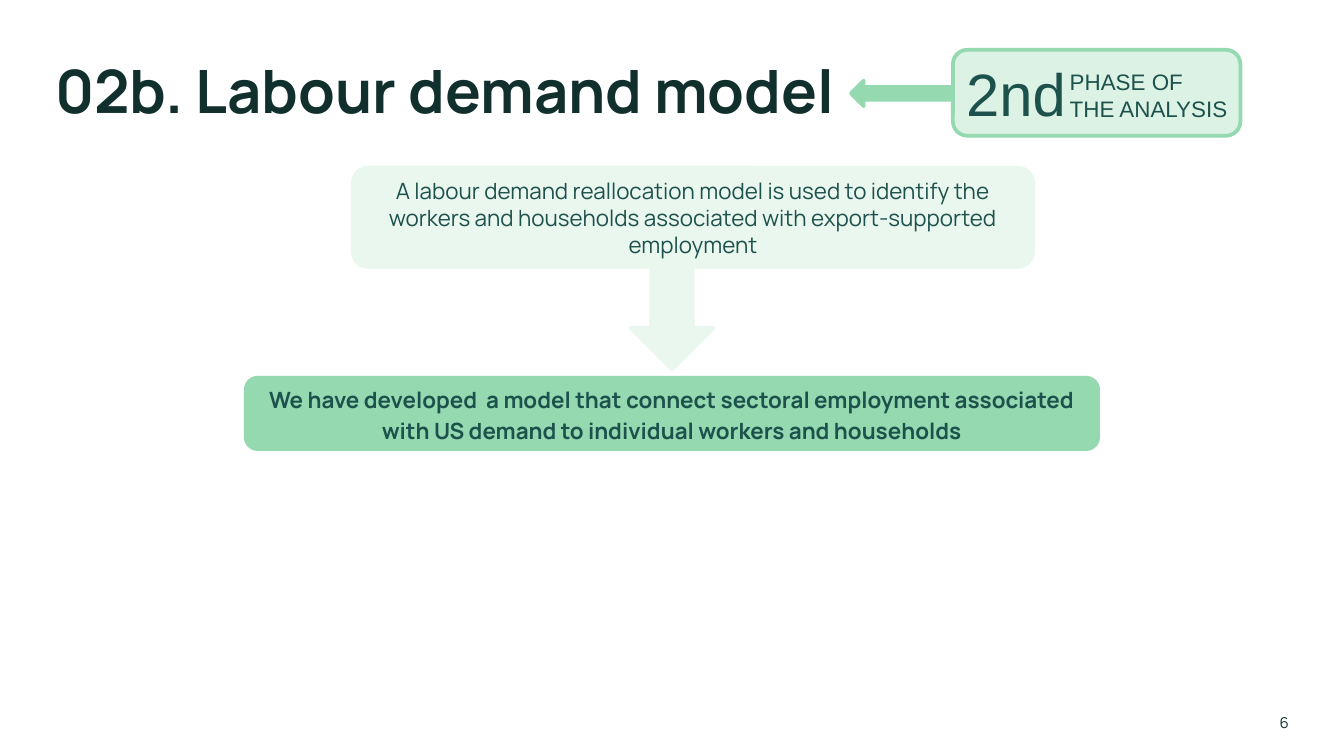
from dataclasses import dataclass

from pptx import Presentation
from pptx.dml.color import RGBColor
from pptx.enum import shapes, text
from pptx.util import Pt


@dataclass(frozen=True)
class Theme:
    ink: str = "11302D"
    teal: str = "1D514C"
    green: str = "95D9B0"
    mint: str = "DCF2E5"
    pale: str = "EAF7EF"
    display: str = "Manrope"
    plain: str = "Arial"
    heading: int = 32
    body: int = 12
    small: int = 8
    outline: int = 2


THEME = Theme()
KIND = shapes.MSO_SHAPE
ALIGN = text.PP_ALIGN
ANCHOR = text.MSO_ANCHOR


def write(box, content, size=THEME.body, font=THEME.display, color=THEME.teal,
          bold=False, align=ALIGN.LEFT, anchor=ANCHOR.TOP, spacing=None,
          inset=True, wrap=True):
    frame = box.text_frame
    frame.word_wrap = wrap
    frame.vertical_anchor = anchor
    if not inset:
        frame.margin_left = frame.margin_right = Pt(0)
        frame.margin_top = frame.margin_bottom = Pt(0)
    for index, line in enumerate(content.split("\n")):
        para = frame.add_paragraph() if index else frame.paragraphs[0]
        para.alignment = align
        if spacing:
            para.line_spacing = spacing
        span = para.add_run()
        span.text = line
        span.font.name = font
        span.font.size = Pt(size)
        span.font.bold = bold
        span.font.color.rgb = RGBColor.from_string(color)


def add_label(page, area, content, **style):
    box = page.shapes.add_textbox(*map(Pt, area))
    write(box, content, **style)


def add_block(page, kind, area, fill, line=None):
    block = page.shapes.add_shape(kind, *map(Pt, area))
    block.shadow.inherit = False
    block.fill.solid()
    block.fill.fore_color.rgb = RGBColor.from_string(fill)
    if line:
        block.line.color.rgb = RGBColor.from_string(line)
        block.line.width = Pt(THEME.outline)
    else:
        block.line.fill.background()
    return block


def add_phase_badge(page):
    left, top, width, height = 510.5, 26.7, 154, 46
    add_block(page, KIND.LEFT_ARROW, (455.8, 43.2, 61.2, 13.7), THEME.green, THEME.green)
    add_block(page, KIND.ROUNDED_RECTANGLE, (left, top, width, height),
              THEME.mint, THEME.green)
    add_label(page, (left, top, 68.4, height), "2nd", size=THEME.heading,
              font=THEME.plain, wrap=False)
    add_label(page, (566, 33.1, 101.5, 36), "PHASE OF\nTHE ANALYSIS",
              font=THEME.plain, wrap=False)


def add_model_flow(page):
    add_block(page, KIND.ROUNDED_RECTANGLE, (188, 88.8, 366.5, 55.2), THEME.pale)
    add_label(page, (188, 91.5, 366.5, 51),
              "A labour demand reallocation model is used to identify the workers "
              "and households associated with export-supported employment",
              align=ALIGN.CENTER)
    add_block(page, KIND.DOWN_ARROW, (337.7, 142.6, 44.6, 55.4), THEME.pale, THEME.pale)
    result = add_block(page, KIND.ROUNDED_RECTANGLE, (131.7, 202.4, 456.6, 38.2),
                       THEME.green, THEME.green)
    write(result,
          "We have developed  a model that connect sectoral employment associated "
          "with US demand to individual workers and households",
          bold=True, align=ALIGN.CENTER, anchor=ANCHOR.MIDDLE, spacing=1.15)


def main():
    deck = Presentation()
    deck.slide_width, deck.slide_height = Pt(720), Pt(405)
    page = deck.slides.add_slide(deck.slide_layouts[6])
    add_label(page, (29.5, 28.8, 660, 39), "02b. Labour demand model",
              size=THEME.heading, color=THEME.ink, bold=True, inset=False)
    add_model_flow(page)
    add_phase_badge(page)
    add_label(page, (641.5, 380.2, 49, 13.7), "6", size=THEME.small, color=THEME.ink,
              align=ALIGN.RIGHT, anchor=ANCHOR.MIDDLE, inset=False)
    deck.save("out.pptx")


if __name__ == "__main__":
    main()
